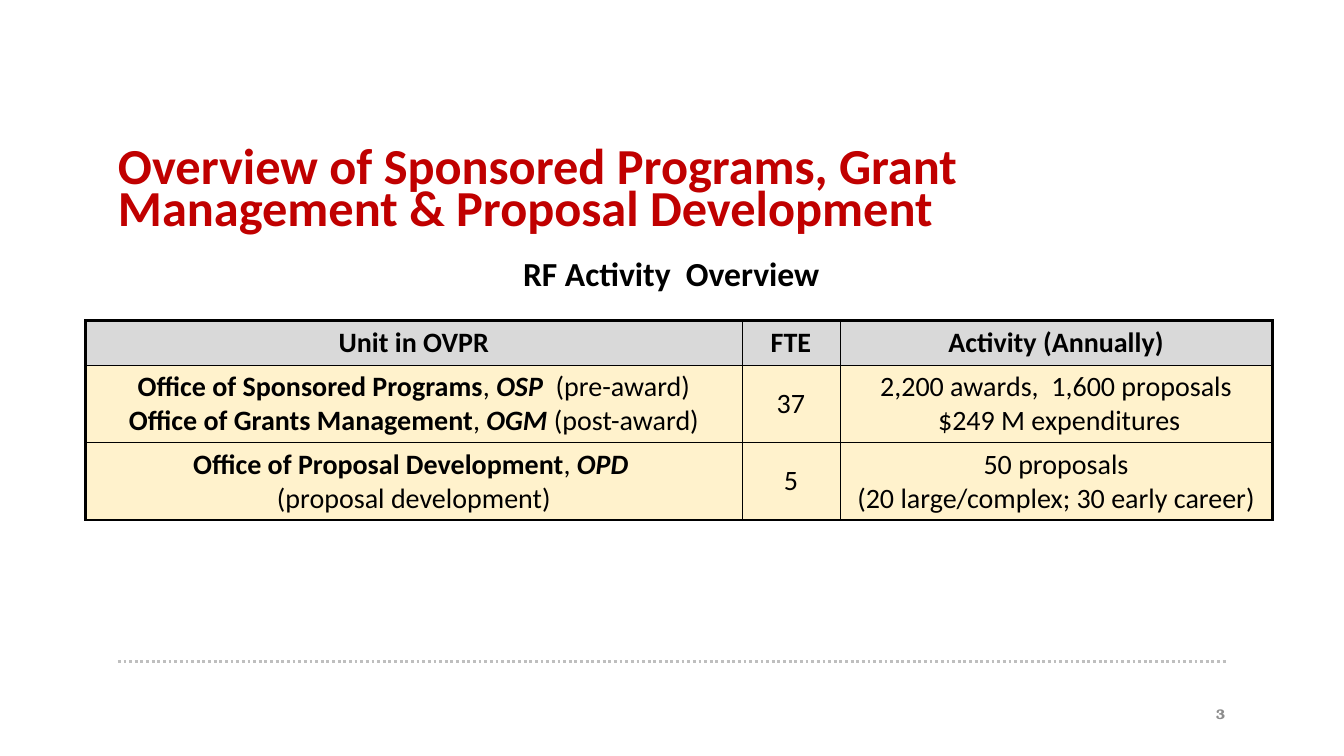
from lxml import etree
from pptx import Presentation, util as u
from pptx.dml.color import RGBColor
from pptx.enum import dml, shapes, text
from pptx.oxml import ns

# Content: a cell is a list of lines, a line is a list of (words, style)
PLAIN, BOLD, BOLD_ITALIC = {"bold": False}, {"bold": True}, {"bold": True, "italic": True}
TITLE = "Overview of Sponsored Programs, Grant Management & Proposal Development"
SUBTITLE = "RF Activity  Overview"
PAGE = "3"
HEADINGS = ["Unit in OVPR", "FTE", "Activity (Annually)"]
UNITS = [
    [[[("Office of Sponsored Programs", BOLD), (", ", PLAIN),
       ("OSP  ", BOLD_ITALIC), ("(pre-award)", PLAIN)],
      [("Office of Grants Management", BOLD), (", ", PLAIN),
       ("OGM ", BOLD_ITALIC), ("(post-award)", PLAIN)]],
     [[("37", PLAIN)]],
     [[("2,200 awards,  1,600 proposals", PLAIN)], [(" $249 M expenditures", PLAIN)]]],
    [[[("Office of Proposal Development", BOLD), (", ", PLAIN),
       ("OPD ", BOLD_ITALIC), ("\n", PLAIN), ("(proposal development)", PLAIN)]],
     [[("5", PLAIN)]],
     [[("50 proposals", PLAIN)], [("(20 large/complex; 30 early career)", PLAIN)]]],
]
ROWS = [[[[(heading, BOLD)]] for heading in HEADINGS]] + UNITS

THEME = {
    "body": "Calibri", "number": "TeX Gyre Bonum",
    "red": "C00000", "black": "000000", "grey": "8C8C8C", "rule": "BFBFBF",
    "header": "D9D9D9", "cream": "FFF2CC",
    "title_pt": 36, "subtitle_pt": 24, "cell_pt": 20, "page_pt": 10,
    "outer_pt": 2.25, "inner_pt": 0.5, "rule_pt": 2,
}

# Layout in inches
WIDTH, HEIGHT = 13.33, 7.5
MARGIN, CONTENT_WIDTH = 1.17, 11
RULE_Y = 6.56
TABLE_LEFT, TABLE_TOP = 0.85, 3.18
COLUMNS = [6.51, 0.97, 4.29]
ROW_HEIGHTS = [0.44, 0.77, 0.77]


def inches(*lengths):
    return [u.Inches(length) for length in lengths]


def set_all(target, values):
    for name, value in values.items():
        setattr(target, name, value)


def style(font, size, color, face="body", **values):
    set_all(font, {"size": u.Pt(THEME[size]), "name": THEME[face], **values})
    font.color.rgb = RGBColor.from_string(THEME[color])


def add_label(slide, words, box, align, anchor, wrap, *font, **values):
    frame = slide.shapes.add_textbox(*inches(*box)).text_frame
    set_all(frame, {"word_wrap": wrap, "vertical_anchor": anchor})
    paragraph = frame.paragraphs[0]
    paragraph.alignment = align
    run = paragraph.add_run()
    run.text = words
    style(run.font, *font, **values)


def add_borders(cell, outer_sides):
    """Thick lines on the outer edge of the table, thin lines inside."""
    props = cell._tc.get_or_add_tcPr()
    for side, outer in outer_sides.items():
        points = THEME["outer_pt" if outer else "inner_pt"]
        line = etree.SubElement(props, ns.qn(f"a:ln{side}"), w=str(int(u.Pt(points))))
        fill = etree.SubElement(line, ns.qn("a:solidFill"))
        etree.SubElement(fill, ns.qn("a:srgbClr"), val=THEME["black"])


def fill_cell(cell, lines, color):
    cell.fill.solid()
    cell.fill.fore_color.rgb = RGBColor.from_string(THEME[color])
    cell.vertical_anchor = text.MSO_ANCHOR.MIDDLE
    frame = cell.text_frame
    for index, line in enumerate(lines):
        paragraph = frame.add_paragraph() if index else frame.paragraphs[0]
        paragraph.alignment = text.PP_ALIGN.CENTER
        for words, emphasis in line:
            if words == "\n":
                paragraph.add_line_break()
                continue
            run = paragraph.add_run()
            run.text = words
            style(run.font, "cell_pt", "black", **emphasis)


def add_rule(slide):
    rule = slide.shapes.add_connector(
        shapes.MSO_CONNECTOR.STRAIGHT,
        *inches(MARGIN, RULE_Y, MARGIN + CONTENT_WIDTH, RULE_Y))
    rule.line.color.rgb = RGBColor.from_string(THEME["rule"])
    set_all(rule.line, {"width": u.Pt(THEME["rule_pt"]),
                        "dash_style": dml.MSO_LINE.ROUND_DOT})
    etree.SubElement(rule._element.spPr, ns.qn("a:effectLst"))


def add_title(slide):
    title = slide.shapes.title
    set_all(title, dict(zip(("left", "top", "width", "height"),
                            inches(MARGIN, 1.49, CONTENT_WIDTH, 0.57))))
    frame = title.text_frame
    frame.text = TITLE
    set_all(frame, {"margin_left": 0, "margin_top": 0, "margin_right": 0,
                    "margin_bottom": 0, "word_wrap": True,
                    "auto_size": text.MSO_AUTO_SIZE.NONE,
                    "vertical_anchor": text.MSO_ANCHOR.TOP})
    paragraph = frame.paragraphs[0]
    set_all(paragraph, {"alignment": text.PP_ALIGN.LEFT, "line_spacing": 0.7})
    style(paragraph.runs[0].font, "title_pt", "red", bold=True)


def add_units_table(slide):
    last_row, last_column = len(ROWS) - 1, len(COLUMNS) - 1
    table = slide.shapes.add_table(
        len(ROWS), len(COLUMNS),
        *inches(TABLE_LEFT, TABLE_TOP, sum(COLUMNS), sum(ROW_HEIGHTS))).table
    set_all(table, {"first_row": False, "horz_banding": False})
    for column, width in zip(table.columns, COLUMNS):
        column.width = u.Inches(width)
    for r, row in enumerate(ROWS):
        table.rows[r].height = u.Inches(ROW_HEIGHTS[r])
        for c, lines in enumerate(row):
            cell = table.cell(r, c)
            add_borders(cell, {"L": c == 0, "R": c == last_column,
                               "T": r == 0, "B": r == last_row})
            fill_cell(cell, lines, "cream" if r else "header")


def main():
    deck = Presentation()
    deck.slide_width, deck.slide_height = inches(WIDTH, HEIGHT)
    slide = deck.slides.add_slide(deck.slide_layouts.get_by_name("Title Only"))
    add_rule(slide)
    add_title(slide)
    add_label(slide, SUBTITLE, (5.09, 2.46, 3.3, 0.5), text.PP_ALIGN.LEFT,
              text.MSO_ANCHOR.TOP, True, "subtitle_pt", "black", bold=True)
    add_units_table(slide)
    add_label(slide, PAGE, (9.25, 6.88, 3, 0.4), text.PP_ALIGN.RIGHT,
              text.MSO_ANCHOR.MIDDLE, True, "page_pt", "grey", "number", bold=True)
    deck.save("out.pptx")


if __name__ == "__main__":
    main()
